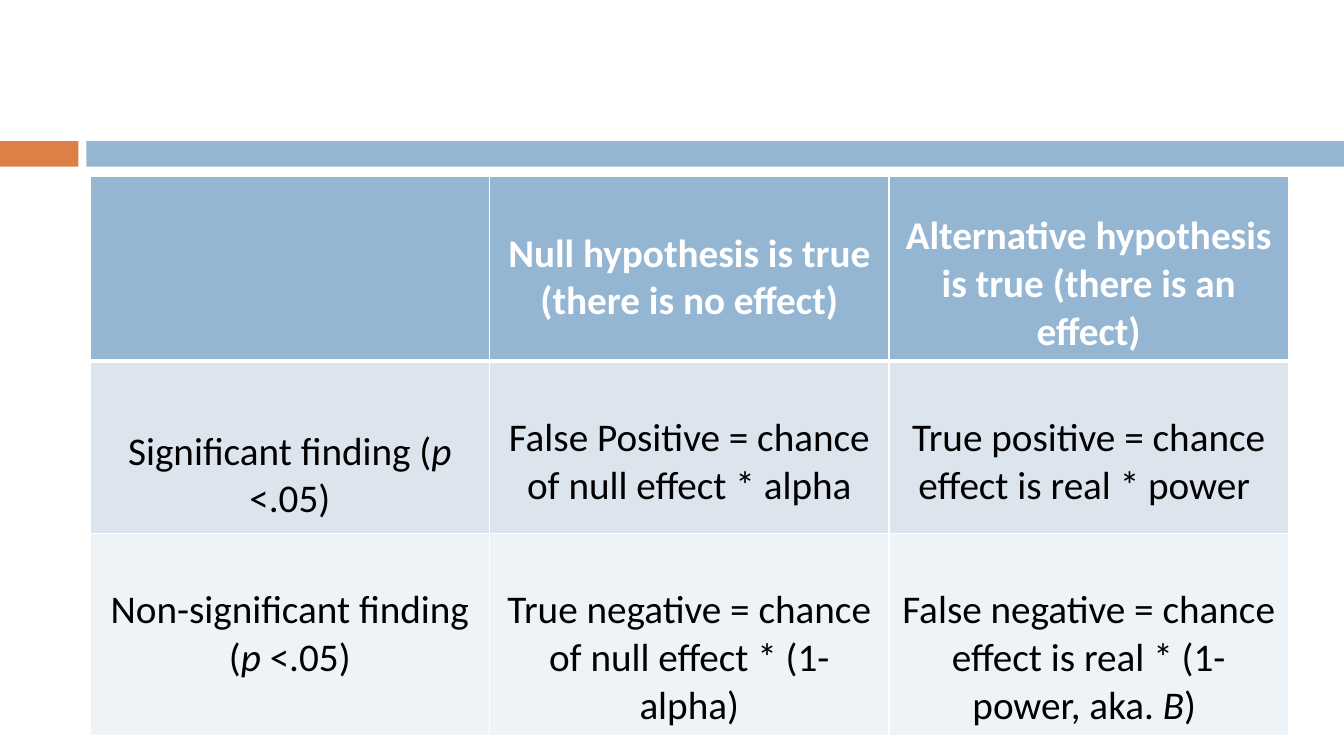
from lxml.etree import SubElement
from pptx import Presentation
from pptx.dml.color import RGBColor
from pptx.enum.shapes import MSO_SHAPE as Shape
from pptx.enum.text import MSO_ANCHOR as Anchor, PP_ALIGN as Align
from pptx.oxml.ns import qn
from pptx.util import Cm, Pt

WHITE = RGBColor(0xFF, 0xFF, 0xFF)
BLACK = RGBColor(0x00, 0x00, 0x00)
ORANGE = RGBColor(0xDD, 0x80, 0x47)
BLUE = RGBColor(0x94, 0xB6, 0xD2)
PALE_BLUE = RGBColor(0xDC, 0xE5, 0xEE)
PALEST_BLUE = RGBColor(0xEE, 0xF3, 0xF7)

ROW_FILLS = [BLUE, PALE_BLUE, PALEST_BLUE]
TOP_MARGINS = [[1.34, 1.34, 0.9], [1.68, 1.34, 1.34], [1.34, 1.34, 1.34]]
OUTCOMES = [
    [
        [],
        [("Null hypothesis is true (there is no effect)", False)],
        [("Alternative hypothesis is true (there is an effect)", False)],
    ],
    [
        [("Significant finding (", False), ("p ", True), ("<.05)", False)],
        [("False Positive = chance of null effect * alpha", False)],
        [("True positive = chance effect is real * power ", False)],
    ],
    [
        [("Non-significant finding (", False), ("p ", True), ("<.05)", False)],
        [("True negative = chance of null effect * (1-alpha)", False)],
        [("False negative = chance effect is real * (1-power, aka. ", False),
         ("B", True), (") ", False)],
    ],
]


def add_bar(page, left, top, width, height, color):
    """Draw one plain coloured bar."""
    bar = page.shapes.add_shape(Shape.RECTANGLE, left, top, width, height)
    bar.shadow.inherit = False
    bar.fill.solid()
    bar.fill.fore_color.rgb = color
    bar.line.fill.background()


def add_band(page, left, top, width, height):
    """Draw the orange and blue band across the given box."""
    accent_width, gap = Cm(1.98), Cm(0.2)
    add_bar(page, left, top, accent_width, height, ORANGE)
    blue_left = left + accent_width + gap
    add_bar(page, blue_left, top, left + width - blue_left, height, BLUE)


def set_borders(cell, bottom_width):
    """Give a cell white borders with the given bottom width."""
    properties = cell._tc.get_or_add_tcPr()
    widths = {"lnL": Pt(1), "lnR": Pt(1), "lnT": Pt(1), "lnB": bottom_width}
    for position, (side, width) in enumerate(widths.items()):
        border = SubElement(properties, qn(f"a:{side}"), w=str(width))
        fill = SubElement(border, qn("a:solidFill"))
        SubElement(fill, qn("a:srgbClr"), val=str(WHITE))
        properties.insert(position, border)


def fill_cell(cell, spans, is_header, color, top_margin):
    """Write one styled table cell."""
    cell.fill.solid()
    cell.fill.fore_color.rgb = color
    cell.vertical_anchor = Anchor.TOP
    cell.margin_top = top_margin
    set_borders(cell, Pt(3) if is_header else Pt(1))
    para = cell.text_frame.paragraphs[0]
    para.alignment = Align.CENTER
    for text, italic in spans:
        span = para.add_run()
        span.text = text
        span.font.name = "Calibri"
        span.font.size = Pt(28)
        span.font.bold = is_header
        span.font.italic = italic
        span.font.color.rgb = WHITE if is_header else BLACK


def add_outcome_table(page, left, top, width, height):
    """Place the table of test outcomes in the given box."""
    rows, columns = len(OUTCOMES), len(OUTCOMES[0])
    table = page.shapes.add_table(rows, columns, left, top, width, height).table
    for row, cells in enumerate(OUTCOMES):
        for column, spans in enumerate(cells):
            fill_cell(table.cell(row, column), spans, row == 0,
                      ROW_FILLS[row], Cm(TOP_MARGINS[row][column]))


def main():
    """Build and save the deck."""
    deck = Presentation()
    deck.slide_width, deck.slide_height = Cm(33.87), Cm(19.05)
    page = deck.slides.add_slide(deck.slide_layouts[6])
    add_band(page, Cm(0), Cm(3.56), deck.slide_width, Cm(0.64))
    add_outcome_table(page, Cm(2.27), Cm(4.45), Cm(30.2), Cm(13.02))
    deck.save("out.pptx")


if __name__ == "__main__":
    main()
